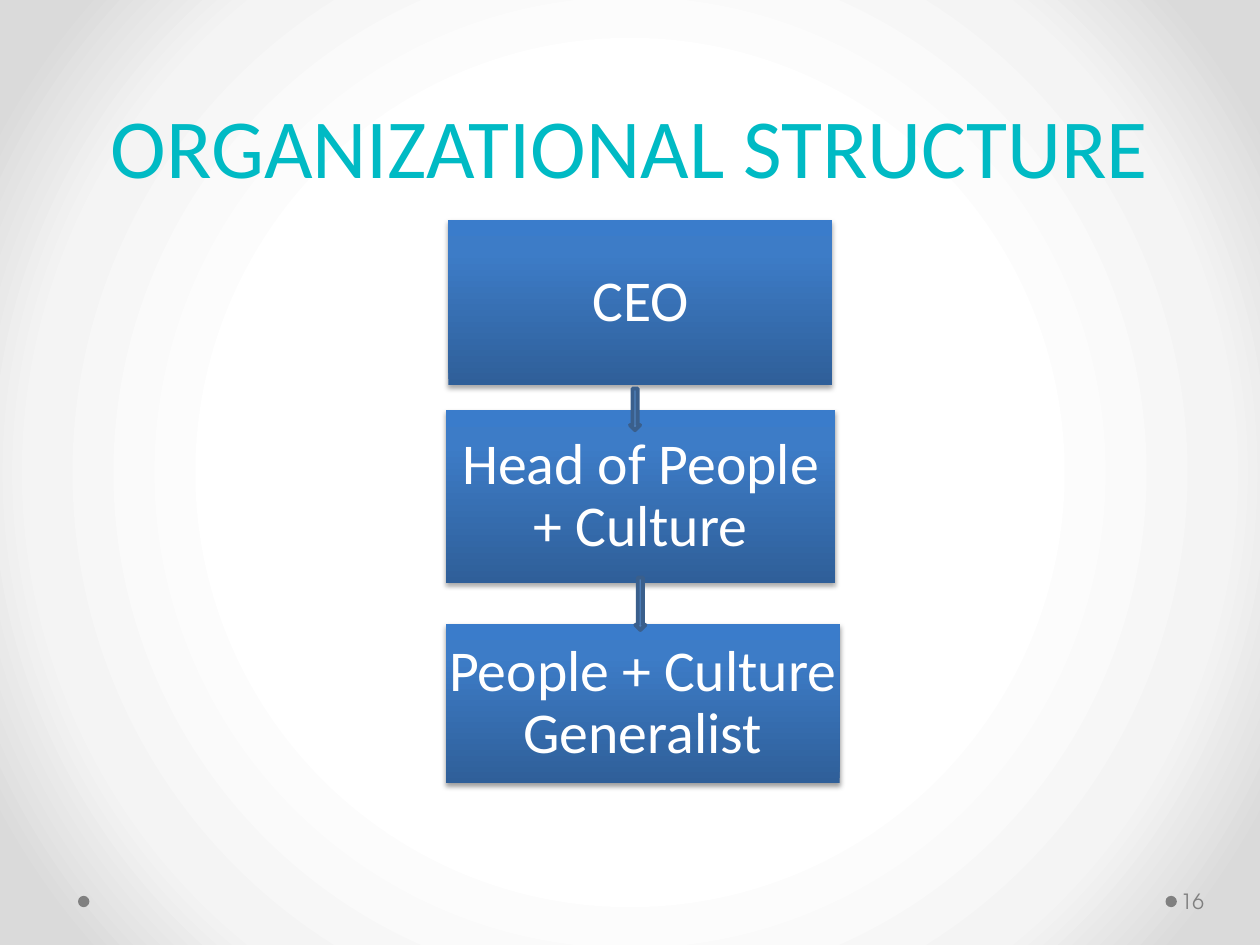
import pptx
import pptx.dml.color
import pptx.enum.shapes
import pptx.enum.text
import pptx.oxml
import pptx.oxml.ns
import pptx.util
from dataclasses import dataclass

Pt = pptx.util.Pt
SHAPE = pptx.enum.shapes.MSO_SHAPE
ALIGN = pptx.enum.text.PP_ALIGN
ANCHOR = pptx.enum.text.MSO_ANCHOR
NS = pptx.oxml.ns.nsdecls("a")


@dataclass(frozen=True)
class Theme:
    font: str = "Calibri"
    number_font: str = "TeX Gyre Adventor"
    title_size: float = 48
    box_size: float = 33
    number_size: float = 12
    title: str = "00BAC4"
    box_text: str = "FFFFFF"
    muted: str = "808080"
    arrow: str = "4F81BD"
    arrow_line: str = "3A5F8C"
    elbow: str = "3F6797"
    line_width: float = 2.25
    backdrop: tuple = ((50, "FFFFFF"), (76, "F4F4F4"), (92, "DADADA"))
    box: tuple = ((0, "2F5F99"), (80, "3D7CC7"), (100, "3A7CCB"))


def rgb(color):
    return pptx.dml.color.RGBColor.from_string(color)


def set_gradient(parent, stops, direction):
    """Swap the default gradient in parent for one with these stops."""
    gs = "".join(f'<a:gs pos="{pos * 1000}"><a:srgbClr val="{c}"/></a:gs>' for pos, c in stops)
    new = pptx.oxml.parse_xml(
        f'<a:gradFill {NS} rotWithShape="1"><a:gsLst>{gs}</a:gsLst>{direction}</a:gradFill>')
    old = parent.find(".//" + pptx.oxml.ns.qn("a:gradFill"))
    old.getparent().replace(old, new)


class SlideBuilder:
    def __init__(self, slide, theme):
        self.s, self.theme = slide, theme

    def background(self):
        self.s.background.fill.gradient()
        set_gradient(self.s.element, self.theme.backdrop,
                     '<a:path path="circle"><a:fillToRect l="50000" t="50000" '
                     'r="50000" b="50000"/></a:path>')

    def set_text(self, sp, text, size, color, font, align, anchor, insets, spacing=None):
        tf = sp.text_frame
        tf.word_wrap = True
        tf.vertical_anchor = anchor
        tf.margin_left, tf.margin_top, tf.margin_right, tf.margin_bottom = map(Pt, insets)
        tf.text = text
        p = tf.paragraphs[0]
        p.alignment, p.line_spacing = align, spacing
        r = p.runs[0]
        r.font.size, r.font.name = Pt(size), font
        r.font.color.rgb = rgb(color)

    def text(self, rect, *style, **options):
        self.set_text(self.s.shapes.add_textbox(*map(Pt, rect)), *style, **options)

    def shape(self, kind, rect, fill, line=None):
        sp = self.s.shapes.add_shape(kind, *map(Pt, rect))
        sp.shadow.inherit = False
        sp.fill.solid()
        sp.fill.fore_color.rgb = rgb(fill)
        if line:
            self.outline(sp, line)
        else:
            sp.line.fill.background()
        return sp

    def outline(self, sp, color):
        sp.line.color.rgb = rgb(color)
        sp.line.width = Pt(self.theme.line_width)

    def elbow(self, start, *points):
        fb = self.s.shapes.build_freeform(*map(Pt, start))
        fb.add_line_segments([tuple(map(Pt, xy)) for xy in points], close=False)
        sp = fb.convert_to_shape()
        sp.shadow.inherit = False
        sp.fill.background()
        self.outline(sp, self.theme.elbow)

    def box(self, rect, text, shadow_alpha, shadow_distance):
        t = self.theme
        sp = self.shape(SHAPE.RECTANGLE, rect, t.box[0][1])
        sp.fill.gradient()
        set_gradient(sp.element.spPr, t.box, '<a:lin ang="16200000" scaled="0"/>')
        effects = sp.element.spPr.find(pptx.oxml.ns.qn("a:effectLst"))
        effects.append(pptx.oxml.parse_xml(
            f'<a:outerShdw {NS} blurRad="{Pt(3.1)}" dist="{Pt(shadow_distance)}" '
            f'dir="5400000" rotWithShape="0"><a:srgbClr val="000000">'
            f'<a:alpha val="{shadow_alpha * 1000}"/></a:srgbClr></a:outerShdw>'))
        self.set_text(sp, text, t.box_size, t.box_text, t.font,
                      ALIGN.CENTER, ANCHOR.MIDDLE, (1.65,) * 4, spacing=0.9)


def main():
    prs = pptx.Presentation()
    prs.slide_width, prs.slide_height = Pt(720), Pt(540)
    theme = Theme()
    b = SlideBuilder(prs.slides.add_slide(prs.slide_layouts[6]), theme)

    # Background and footer dots
    b.background()
    for x in (666, 44.6):
        b.shape(SHAPE.OVAL, (x, 511.9, 6.5, 6.5), theme.muted)

    # Title
    b.text((36, 10.8, 648, 104.4), "ORGANIZATIONAL STRUCTURE", theme.title_size, theme.title,
           theme.font, ALIGN.CENTER, ANCHOR.BOTTOM, (7.2, 3.6, 7.2, 3.6), spacing=Pt(58))

    # Reporting line, from the top down
    b.elbow((366, 333.4), (367.2, 333.4), (367.2, 356.4))
    for rect, role, alpha, distance in (
        ((256.2, 125.5, 219.5, 94.5), "CEO", 35, 1.8),
        ((254.9, 234.2, 222.4, 99.2), "Head of People + Culture", 35, 1.8),
        ((254.9, 356.6, 225, 91), "People + Culture Generalist", 38, 1.6),
    ):
        b.box(rect, role, alpha, distance)

    # Arrows between the roles
    for rect in ((360, 222, 5.8, 23.8), (363, 330, 5.8, 30)):
        b.shape(SHAPE.DOWN_ARROW, rect, theme.arrow, theme.arrow_line)

    # Slide number
    b.text((672.5, 500.4, 44, 28.8), "16", theme.number_size, theme.muted, theme.number_font,
           ALIGN.LEFT, ANCHOR.MIDDLE, (2.2, 3.6, 3.6, 3.6))

    prs.save("out.pptx")


if __name__ == "__main__":
    main()
